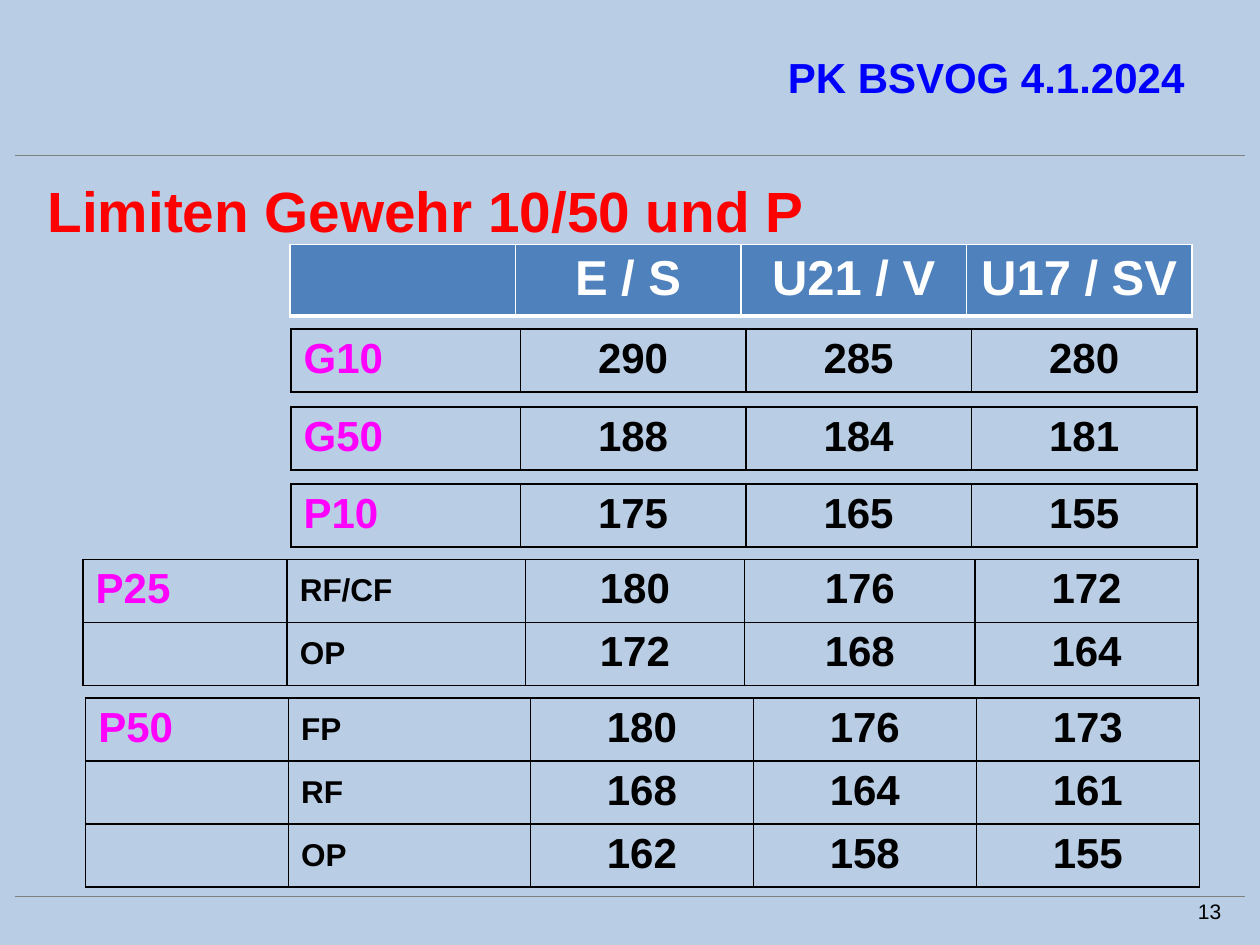
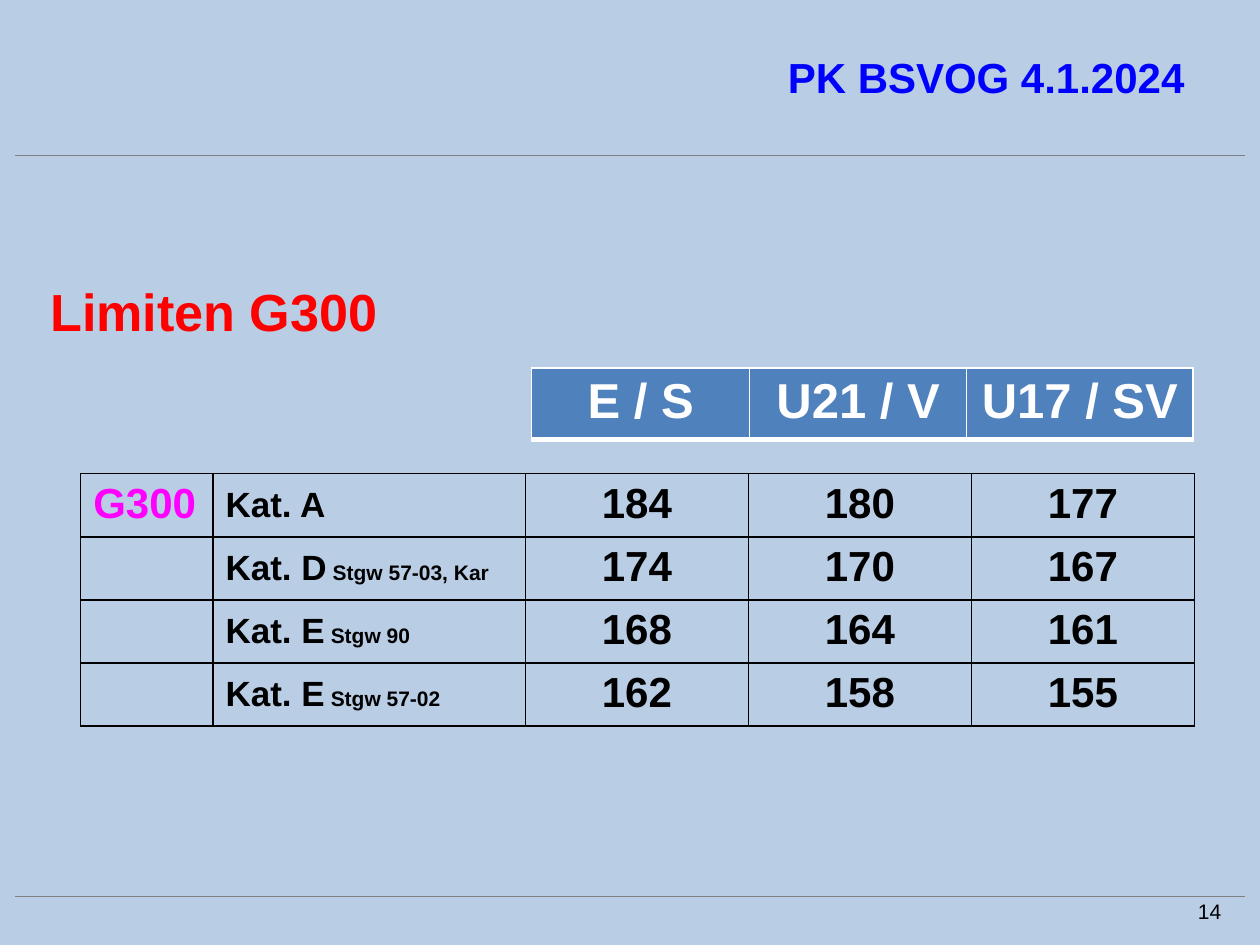
from lxml import etree
from pptx import Presentation
from pptx import util as u
from pptx.dml.color import RGBColor
from pptx.enum import shapes, text
from pptx.oxml.ns import qn

SKY = RGBColor(0xB9, 0xCD, 0xE5)
STEEL = RGBColor(0x4F, 0x81, 0xBD)
GREY = RGBColor(0x80, 0x80, 0x80)
BLACK = RGBColor(0, 0, 0)
WHITE = RGBColor(0xFF, 0xFF, 0xFF)
RED = RGBColor(0xFF, 0, 0)
BLUE = RGBColor(0, 0, 0xFF)
MAGENTA = RGBColor(0xFF, 0, 0xFF)

FONT = "Arial"
LEFT, CENTER, RIGHT = text.PP_ALIGN.LEFT, text.PP_ALIGN.CENTER, text.PP_ALIGN.RIGHT
GRID = dict.fromkeys("LRTB", (BLACK, 1))
HEADER_GRID = {**dict.fromkeys("LRT", (WHITE, 1)), "B": (WHITE, 3)}
CLASSES = ["E / S", "U21 / V", "U17 / SV"]
HEADER_HEIGHT = 0.53
ROW_HEIGHT = 0.47


def write(para, words, size, color, bold=True):
    span = para.add_run()
    span.text = words
    style = {"name": FONT, "size": u.Pt(size), "bold": bold}
    for key, value in style.items():
        setattr(span.font, key, value)
    span.font.color.rgb = color


def add_text(page, place, words, size, color, bold=True, align=LEFT):
    box = page.shapes.add_textbox(*map(u.Inches, place))
    box.text_frame.word_wrap = True
    para = box.text_frame.paragraphs[0]
    para.alignment = align
    write(para, words, size, color, bold)


def add_rule(page, top):
    rule = page.shapes.add_connector(
        shapes.MSO_CONNECTOR.STRAIGHT,
        u.Inches(0.12), u.Inches(top), u.Inches(9.88), u.Inches(top))
    rule.line.color.rgb = GREY
    rule.line.width = u.Pt(0.25)
    etree.SubElement(rule._element.spPr, qn("a:effectLst"))


def add_page(deck, number):
    page = deck.slides.add_slide(deck.slide_layouts[6])
    page.background.fill.solid()
    page.background.fill.fore_color.rgb = SKY
    add_text(page, (9.41, 7.08, 0.53, 0.3), str(number), 12, BLACK, bold=False)
    for top in (7.11, 1.23):
        add_rule(page, top)
    add_text(page, (2.32, 0.36, 7.18, 0.63), "PK BSVOG 4.1.2024", 24, BLUE, align=RIGHT)
    return page


def set_borders(cell, borders):
    properties = cell._tc.get_or_add_tcPr()
    for side, (color, width) in borders.items():
        line = etree.SubElement(properties, qn(f"a:ln{side}"), w=str(u.Pt(width)))
        fill = etree.SubElement(line, qn("a:solidFill"))
        etree.SubElement(fill, qn("a:srgbClr"), val=str(color))


def add_grid(page, left, top, widths, row_height, row_count, borders, fill=None):
    frame = page.shapes.add_table(
        row_count, len(widths), u.Inches(left), u.Inches(top),
        u.Inches(sum(widths)), u.Inches(row_height * row_count))
    table = frame.table
    table.first_row = table.horz_banding = False
    for column, width in zip(table.columns, widths):
        column.width = u.Inches(width)
    for cell in table.iter_cells():
        set_borders(cell, borders)
        if fill is None:
            cell.fill.background()
        else:
            cell.fill.solid()
            cell.fill.fore_color.rgb = fill
    return table


def fill_cell(cell, words, size, color, align=LEFT):
    para = cell.text_frame.paragraphs[0]
    para.alignment = align
    if words:
        write(para, words, size, color)


def add_header(page, left, top, widths, labels):
    table = add_grid(page, left, top, widths, HEADER_HEIGHT, 1, HEADER_GRID, STEEL)
    for cell, label in zip(table.iter_cells(), labels):
        fill_cell(cell, label, 28, WHITE, CENTER)


def add_limits(page, left, top, widths, discipline, rows, size=18, row_height=ROW_HEIGHT):
    table = add_grid(page, left, top, widths, row_height, len(rows), GRID)
    fill_cell(table.cell(0, 0), discipline, 24, MAGENTA)
    for index, (category, detail, *scores) in enumerate(rows):
        first_score = len(widths) - len(scores)
        if category:
            cell = table.cell(index, 1)
            cell.vertical_anchor = text.MSO_ANCHOR.MIDDLE
            fill_cell(cell, category, size, BLACK)
            if detail:
                write(cell.text_frame.paragraphs[0], f" {detail}", 12, BLACK)
        for column, score in enumerate(scores, first_score):
            fill_cell(table.cell(index, column), str(score), 24, BLACK, CENTER)


def add_rifle_and_pistol(deck):
    page = add_page(deck, 13)
    add_text(page, (0.28, 1.35, 9.45, 0.6), "Limiten Gewehr 10/50 und P", 32.4, RED)
    add_header(page, 2.3, 1.94, [1.79] * 4, ["", *CLASSES])
    single_rows = [
        ("G10", 2.61, 290, 285, 280),
        ("G50", 3.23, 188, 184, 181),
        ("P10", 3.84, 175, 165, 155),
    ]
    for discipline, top, *scores in single_rows:
        add_limits(page, 2.31, top, [1.82] + [1.79] * 3, discipline,
                   [("", "", *scores)], row_height=0.5)
    add_limits(page, 0.66, 4.44, [1.62, 1.89, 1.74, 1.83, 1.77], "P25", [
        ("RF/CF", "", 180, 176, 172),
        ("OP", "", 172, 168, 164),
    ])
    add_limits(page, 0.68, 5.54, [1.61, 1.92] + [1.77] * 3, "P50", [
        ("FP", "", 180, 176, 173),
        ("RF", "", 168, 164, 161),
        ("OP", "", 162, 158, 155),
    ])


def add_rifle_300(deck):
    page = add_page(deck, 14)
    add_text(page, (0.3, 2.17, 9.45, 0.6), "Limiten G300", 29.8, RED)
    add_limits(page, 0.64, 3.76, [1.05, 2.48] + [1.77] * 3, "G300", [
        ("Kat. A", "", 184, 180, 177),
        ("Kat. D", "Stgw 57-03, Kar", 174, 170, 167),
        ("Kat. E", "Stgw 90", 168, 164, 161),
        ("Kat. E", "Stgw 57-02", 162, 158, 155),
    ], size=20)
    add_header(page, 4.22, 2.92, [1.73, 1.72, 1.8], CLASSES)


def main():
    deck = Presentation()
    deck.slide_width, deck.slide_height = u.Inches(10), u.Inches(7.5)
    add_rifle_and_pistol(deck)
    add_rifle_300(deck)
    deck.save("out.pptx")


if __name__ == "__main__":
    main()
